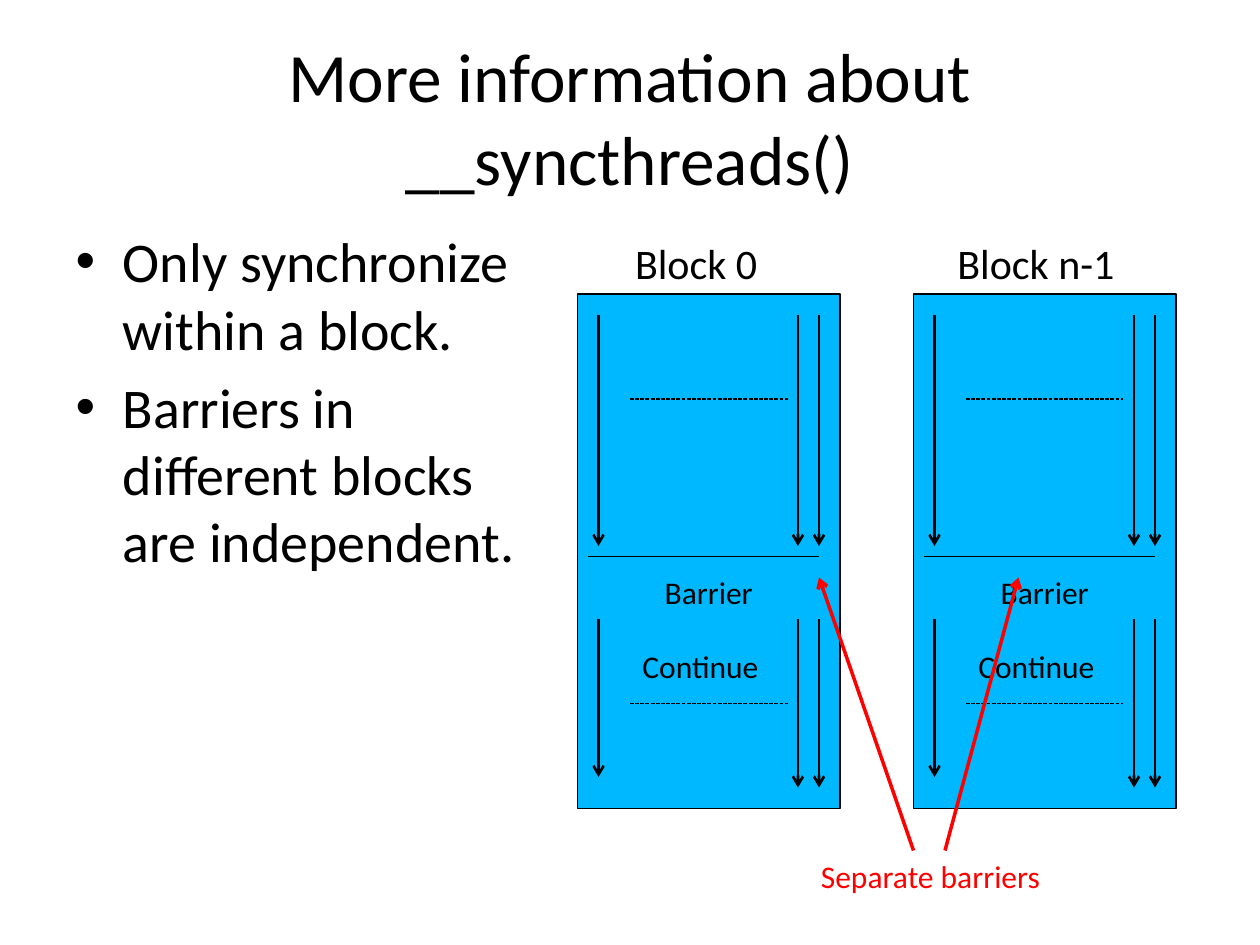
from dataclasses import dataclass

from lxml import etree
from pptx import Presentation
from pptx import util as u
from pptx.dml.color import RGBColor
from pptx.enum import dml, shapes, text
from pptx.oxml.ns import qn

COLUMNS, ROWS = 120, 90
WIDTH, HEIGHT = u.Inches(10), u.Inches(7.5)
FONT = "Calibri"
BLACK, RED, BLUE = "000000", "FF0000", "00B8FF"


@dataclass
class Block:
    label: str
    column: float
    label_offset: float
    label_width: float


@dataclass
class Stroke:
    start: tuple[float, float]
    end: tuple[float, float]
    weight: float = 0.75
    color: str = BLACK
    arrow: bool = False
    dashed: bool = False


BLOCKS = [Block("Block 0", 55, 4.3, 15.7), Block("Block n-1", 87, 3, 19.3)]
# Columns are counted from the left edge of a block.
THREADS = [
    Stroke((column, top), (column, bottom), 1.5, arrow=True)
    for top, bottoms in ((30, (52, 52, 52)), (59, (74, 75, 75)))
    for column, bottom in zip((2, 21, 23), bottoms)
]
OMITTED_THREADS = [Stroke((5, row), (20, row), dashed=True) for row in (38, 67)]
BARRIER = Stroke((1, 53), (23, 53))
POINTERS = [
    Stroke((87, 81), (78, 55), 2, RED, arrow=True),
    Stroke((90, 81), (97, 55), 2, RED, arrow=True),
]


def x(column: float) -> int:
    return round(WIDTH * column / COLUMNS)


def y(row: float) -> int:
    return round(HEIGHT * row / ROWS)


def rgb(color: str) -> RGBColor:
    return RGBColor.from_string(color)


def style(para, size: float, color: str = BLACK) -> None:
    para.font.name = FONT
    para.font.size = u.Pt(size)
    para.font.color.rgb = rgb(color)


def draw_stroke(parent, stroke: Stroke, origin: float = 0) -> None:
    (x1, y1), (x2, y2) = stroke.start, stroke.end
    line = parent.add_connector(
        shapes.MSO_CONNECTOR.STRAIGHT, x(origin + x1), y(y1), x(origin + x2), y(y2)
    )
    line.line.width = u.Pt(stroke.weight)
    line.line.color.rgb = rgb(stroke.color)
    if stroke.dashed:
        # SQUARE_DOT is the system dash's nearest named neighbour
        line.line.dash_style = dml.MSO_LINE.SQUARE_DOT
        line.line._ln.find(qn("a:prstDash")).set("val", "sysDash")
    if stroke.arrow:
        etree.SubElement(line.line._ln, qn("a:tailEnd"), type="arrow")
    etree.SubElement(line._element.spPr, qn("a:effectLst"))


def draw_label(parent, words: str, column: float, row: float, width: float,
               size: float = 18, color: str = BLACK, centred: bool = False) -> None:
    height = 6 if size > 18 else 4.8
    box = parent.add_textbox(x(column), y(row), x(width), y(height))
    frame = box.text_frame
    frame.word_wrap = centred
    frame.auto_size = text.MSO_AUTO_SIZE.SHAPE_TO_FIT_TEXT
    para = frame.paragraphs[0]
    para.text = words
    para.alignment = text.PP_ALIGN.CENTER if centred else text.PP_ALIGN.LEFT
    style(para, size, color)


def draw_block(page, block: Block) -> None:
    parent = page.shapes.add_group_shape().shapes
    left = block.column
    area = parent.add_shape(
        shapes.MSO_SHAPE.RECTANGLE, x(left), y(28), x(25), y(49)
    )
    area.shadow.inherit = False
    area.fill.solid()
    area.fill.fore_color.rgb = rgb(BLUE)
    area.line.color.rgb = rgb(BLACK)
    area.line.width = u.Pt(0.75)
    for stroke in [*THREADS, *OMITTED_THREADS, BARRIER]:
        draw_stroke(parent, stroke, left)
    draw_label(parent, block.label, left + block.label_offset, 22,
               block.label_width, size=24)
    draw_label(parent, "Barrier", left, 54, 25, centred=True)
    draw_label(parent, "Continue", left + 5, 61, 14.5)


def fill_placeholder(box, lines: list[str], size: float,
                     place: tuple[float, float, float, float]) -> None:
    left, top, width, height = place
    box.left, box.top, box.width, box.height = x(left), y(top), x(width), y(height)
    frame = box.text_frame
    frame.text = "\n".join(lines)
    frame.auto_size = text.MSO_AUTO_SIZE.NONE
    for para in frame.paragraphs:
        style(para, size)


def main() -> None:
    deck = Presentation()
    deck.slide_width, deck.slide_height = WIDTH, HEIGHT
    page = deck.slides.add_slide(deck.slide_layouts[1])
    fill_placeholder(page.shapes.title, ["More information about __syncthreads()"],
                     39.6, (6, 3.6, 108, 15))
    fill_placeholder(
        page.placeholders[1],
        ["Only synchronize within a block.",
         "Barriers in different blocks are independent."],
        32, (6, 21, 45, 59.4),
    )
    page.placeholders[1].text_frame.paragraphs[0].space_before = u.Pt(0)
    for block in BLOCKS:
        draw_block(page, block)
    for pointer in POINTERS:
        draw_stroke(page.shapes, pointer)
    draw_label(page.shapes, "Separate barriers", 77, 81, 25.8, color=RED)
    deck.save("out.pptx")


if __name__ == "__main__":
    main()
